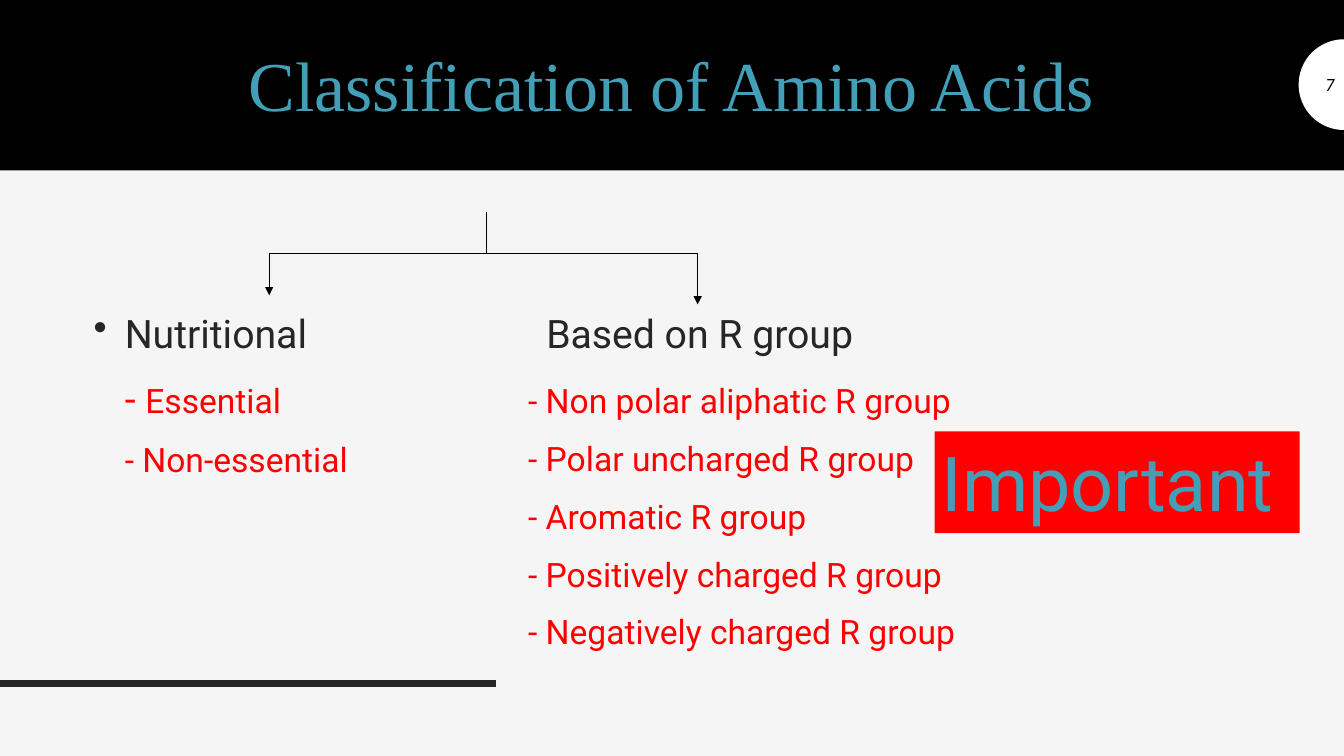
import math
import pptx
import pptx.util
import pptx.dml.color
import pptx.enum.text as enum
import pptx.enum.shapes as kinds
import pptx.oxml
import lxml.etree as etree

WIDE, HIGH = 13.33, 7.5
BODY = "Roboto"
DARK, RED, TEAL, BLACK, WHITE = "262626", "FF0000", "439EB7", "000000", "FFFFFF"
TITLE = "Classification of Amino Acids"
PAGE = "7"
BADGE = "Important "
GROUPS = [
    dict(left=0.83, wide=4.2, mark=True, head="Nutritional", inset=0.31,
         lead=9, dash=28, items=["Essential", "Non-essential"]),
    dict(left=5.14, wide=7.36, mark=False, head="Based on R group", inset=0,
         lead=14, dash=24,
         items=["Non polar aliphatic R group", "Polar uncharged R group",
                "Aromatic R group", "Positively charged R group",
                "Negatively charged R group"]),
]
STEM, LEFT, RIGHT, BAR = 4.83, 2.67, 6.92, 2.52
TREE = [
    (STEM, 2.1, STEM, BAR, False),
    (LEFT, BAR, RIGHT, BAR, False),
    (LEFT, BAR, LEFT, 2.93, True),
    (RIGHT, BAR, RIGHT, 3.02, True),
]

inch = pptx.util.Inches
deck = pptx.Presentation()
deck.slide_width, deck.slide_height = inch(WIDE), inch(HIGH)
slide = deck.slides.add_slide(deck.slide_layouts[6])
shapes = slide.shapes


def tint(code):
    return pptx.dml.color.RGBColor.from_string(code)


def paint(shape, code):
    shape.shadow.inherit = False
    shape.fill.solid()
    shape.fill.fore_color.rgb = tint(code)
    shape.line.fill.background()


def block(left, top, wide, high, code):
    shape = shapes.add_shape(kinds.MSO_SHAPE.RECTANGLE,
                             *map(inch, (left, top, wide, high)))
    paint(shape, code)
    return shape


def style(para, size, code, face=BODY, align=enum.PP_ALIGN.LEFT):
    para.alignment = align
    font = para.font
    font.size, font.name = pptx.util.Pt(size), face
    font.color.rgb = tint(code)


def box(left, top, wide, high, anchor=enum.MSO_ANCHOR.MIDDLE):
    frame = shapes.add_textbox(*map(inch, (left, top, wide, high))).text_frame
    frame.word_wrap = True
    frame.vertical_anchor = anchor
    return frame


def rule(x1, y1, x2, y2, code, width, arrow=False):
    line = shapes.add_connector(kinds.MSO_CONNECTOR.STRAIGHT,
                                *map(inch, (x1, y1, x2, y2)))
    line.line.color.rgb = tint(code)
    line.line.width = pptx.util.Pt(width)
    if arrow:
        tail = etree.SubElement(line.line._get_or_add_ln(),
                                pptx.oxml.ns.qn("a:tailEnd"))
        tail.set("type", "triangle")
    etree.SubElement(line._element.spPr, pptx.oxml.ns.qn("a:effectLst"))


def space(para, gap, margin, hang=0, mark=False):
    para.line_spacing = 1.12
    para.space_before = pptx.util.Pt(gap)
    props = para._p.get_or_add_pPr()
    props.set("marL", str(inch(margin)))
    props.set("indent", str(inch(-hang)))
    if mark:
        etree.SubElement(props, pptx.oxml.ns.qn("a:buChar")).set("char", "•")


def column(group):
    frame = box(group["left"], 2.96, group["wide"], 3.9, enum.MSO_ANCHOR.TOP)
    head = frame.paragraphs[0]
    head.text = group["head"]
    style(head, 28, DARK)
    mark = group["mark"]
    space(head, 9, 0.31 if mark else 0.18, 0.31 if mark else 0, mark)
    for row, item in enumerate(group["items"]):
        para = frame.add_paragraph()
        dash = para.add_run()
        dash.text = "- "
        if row == 0:
            dash.font.size = pptx.util.Pt(group["dash"])
        para.add_run().text = item
        style(para, 24, RED)
        space(para, 9 if row else group["lead"], group["inset"])


slide.background.fill.solid()
slide.background.fill.fore_color.rgb = tint("F5F5F5")
rule(0, 6.78, 4.92, 6.78, DARK, 4.5)
block(0, 0, WIDE, 1.69, BLACK)

radius, middle = 0.45, 0.84
arc = [(inch(WIDE - radius * math.sin(math.pi * step / 32)),
        inch(middle - radius * math.cos(math.pi * step / 32)))
       for step in range(33)]
pen = shapes.build_freeform(*arc[0])
pen.add_line_segments(arc[1:], close=True)
paint(pen.convert_to_shape(), WHITE)

title = box(0.83, 0.33, 11.67, 1.1).paragraphs[0]
title.text = TITLE
title.line_spacing = 0.9
style(title, 50, TEAL, "Times New Roman", enum.PP_ALIGN.CENTER)

page = box(12.89, 0.64, 0.45, 0.4).paragraphs[0]
page.text = PAGE
style(page, 12, BLACK, "Lato", enum.PP_ALIGN.RIGHT)
page.font.italic = True

for group in GROUPS:
    column(group)
for x1, y1, x2, y2, arrow in TREE:
    rule(x1, y1, x2, y2, BLACK, 0.75, arrow)

badge = block(9.27, 4.28, 3.62, 1.01, RED).text_frame
badge.word_wrap = False
badge.vertical_anchor = enum.MSO_ANCHOR.TOP
badge.paragraphs[0].text = BADGE
style(badge.paragraphs[0], 54, TEAL, align=enum.PP_ALIGN.CENTER)

deck.save("out.pptx")
